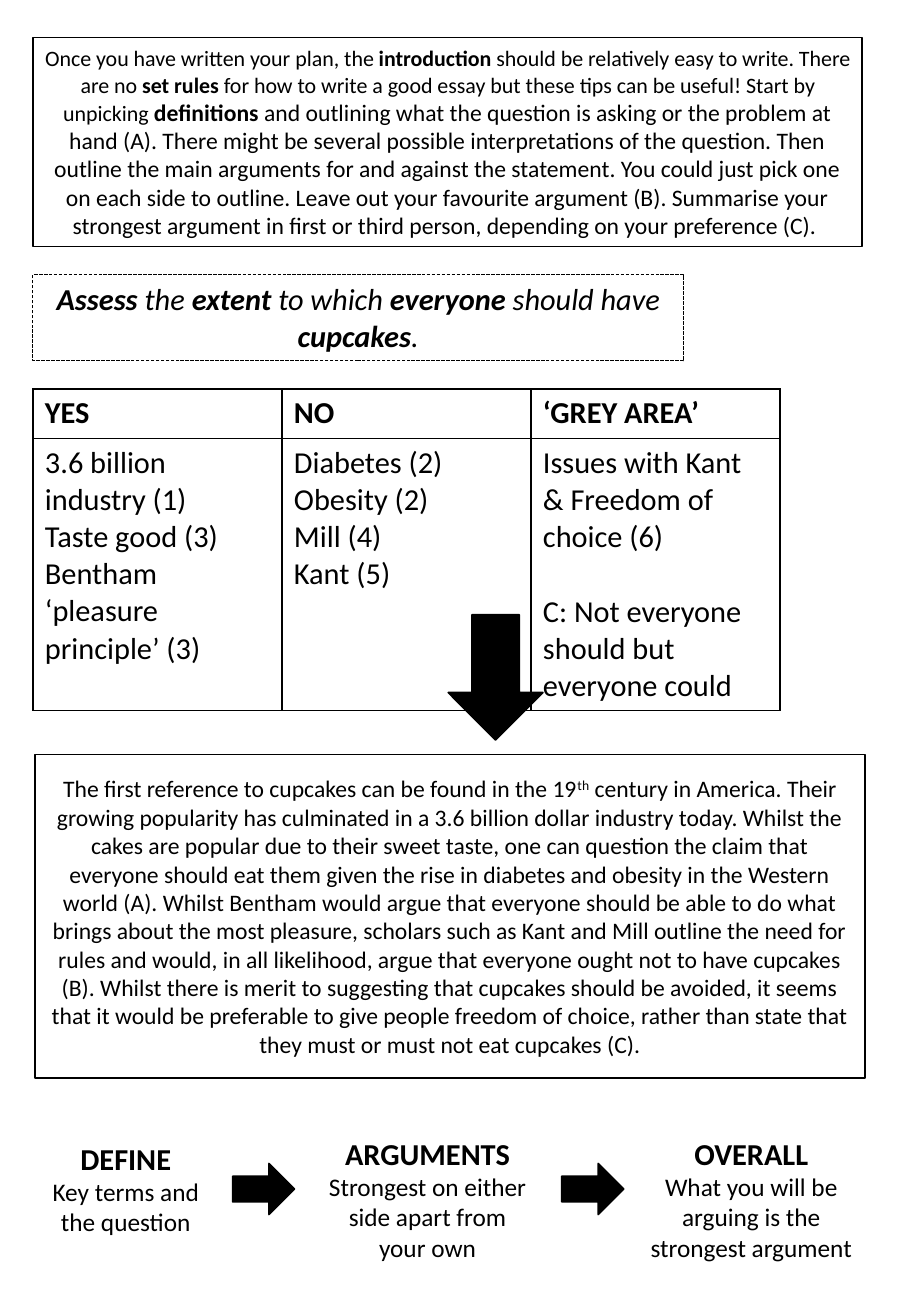
from dataclasses import dataclass
from typing import Optional

from lxml.etree import SubElement
from pptx import Presentation
from pptx.dml.color import RGBColor
from pptx.enum.dml import MSO_LINE_DASH_STYLE as Dash
from pptx.enum.shapes import MSO_AUTO_SHAPE_TYPE as Shape
from pptx.enum.text import MSO_ANCHOR as Anchor, MSO_AUTO_SIZE as AutoSize, PP_ALIGN as Align
from pptx.oxml.ns import qn
from pptx.util import Inches, Pt


@dataclass(frozen=True)
class Theme:
    font: str = "Calibri"
    ink: RGBColor = RGBColor(0, 0, 0)
    paper: RGBColor = RGBColor(255, 255, 255)
    heading: int = 18
    caption: int = 15
    body: int = 14
    opening: int = 13
    line: float = 1
    thin: float = 0.75


@dataclass(frozen=True)
class Area:
    col: float
    row: float
    cols: float
    rows: float

    def emu(self) -> tuple[int, ...]:
        return tuple(int(n * UNIT) for n in (self.col, self.row, self.cols, self.rows))


@dataclass(frozen=True)
class Span:
    text: str
    size: int
    bold: bool = False
    italic: bool = False
    raised: bool = False


@dataclass(frozen=True)
class Panel:
    area: Area
    spans: list[Span]
    dashed: bool = False


@dataclass(frozen=True)
class Step:
    area: Area
    title: str
    detail: str


@dataclass(frozen=True)
class Arrow:
    area: Area
    turn: int = 0


@dataclass(frozen=True)
class Column:
    title: str
    points: list[str]
    gap: int = 0


T = Theme()
UNIT = Inches(0.1)
SLIDE = Area(0, 0, 75, 108.3)
LEFT = 2.7


def marked(text: str, size: int, italic: bool = False) -> list[Span]:
    return [Span(part, size, i % 2 == 1, italic)
            for i, part in enumerate(text.split("*")) if part]


INTRO = marked(
    "Once you have written your plan, the *introduction* should be relatively easy to write. "
    "There are no *set rules* for how to write a good essay but these tips can be useful! "
    "Start by unpicking", T.opening) + marked(
    " *definitions* and outlining what the question is asking or the problem at hand (A). "
    "There might be several possible interpretations of the question. Then outline the main "
    "arguments for and against the statement. You could just pick one on each side to outline. "
    "Leave out your favourite argument (B). Summarise your strongest argument in first or third "
    "person, depending on your preference (C). ", T.body)
QUESTION = marked("*Assess* the *extent* to which *everyone* should have *cupcakes*.",
                  T.heading, italic=True)
EXAMPLE = [
    Span("The first reference to cupcakes can be found in the 19", T.body),
    Span("th", T.body, raised=True),
    Span(" century in America. Their growing popularity has culminated in a 3.6 billion dollar "
         "industry today. Whilst the cakes are popular due to their sweet taste, one can question "
         "the claim that everyone should eat them given the rise in diabetes and obesity in the "
         "Western world (A). Whilst Bentham would argue that everyone should be able to do what "
         "brings about the most pleasure, scholars such as Kant and Mill outline the need for "
         "rules and would, in all likelihood, argue that everyone ought not to have cupcakes (B). "
         "Whilst there is merit to suggesting that cupcakes should be avoided, it seems that it "
         "would be preferable to give people freedom of choice, rather than state that they must "
         "or must not eat cupcakes (C).", T.body),
]
PANELS = [
    Panel(Area(LEFT, 3.1, 68.3, 17.2), INTRO),
    Panel(Area(LEFT, 22.6, 53.6, 7.1), QUESTION, dashed=True),
    Panel(Area(2.9, 62.1, 68.3, 26.6), EXAMPLE),
]
ARROWS = [Arrow(Area(36.9, 50.6, 7.8, 10.3))] + [
    Arrow(Area(col, 95.3, 4.2, 5.1), 270) for col in (19.6, 46.7)]
TABLE_AREA = Area(LEFT, 32, 61.5, 26.4)
HEADER_ROWS = 4.1
COLUMNS = [
    Column("YES", ["3.6 billion industry (1)", "Taste good (3)",
                   "Bentham ‘pleasure principle’ (3)"]),
    Column("NO", ["Diabetes (2)", "Obesity (2)", "Mill (4)", "Kant (5)"]),
    Column("‘GREY AREA’", ["Issues with Kant & Freedom of choice (6)",
                           "C: Not everyone should but everyone could"], gap=22),
]
STEPS = [
    Step(Area(2.9, 93.3, 14.9, 9.1), "DEFINE", "Key terms and the question"),
    Step(Area(26, 92.9, 18.4, 11.6), "ARGUMENTS", "Strongest on either side apart from your own"),
    Step(Area(51.1, 92.9, 21.5, 11.6), "OVERALL",
         "What you will be arguing is the strongest argument"),
]


def style(r, size: int, bold: bool = False, italic: bool = False) -> None:
    f = r.font
    f.name, f.size, f.bold, f.italic = T.font, Pt(size), bold, italic
    f.color.rgb = T.ink


def write(tf, lines: list[str], size: int, bold: bool = False, gap: int = 0) -> None:
    tf.text = "\n".join(lines)
    for i, p in enumerate(tf.paragraphs):
        if i and gap:
            p.space_before = Pt(gap)
        for r in p.runs:
            style(r, size, bold)


def add_preset(s, kind: Shape, area: Area, fill: Optional[RGBColor], width: float):
    sp = s.shapes.add_shape(kind, *area.emu())
    sp.shadow.inherit = False
    if fill is None:
        sp.fill.background()
    else:
        sp.fill.solid()
        sp.fill.fore_color.rgb = fill
    sp.line.color.rgb = T.ink
    sp.line.width = Pt(width)
    return sp


def add_arrow(s, arrow: Arrow) -> None:
    add_preset(s, Shape.DOWN_ARROW, arrow.area, T.ink, T.line).rotation = arrow.turn


def add_panel(s, panel: Panel) -> None:
    fill, width = (None, T.thin) if panel.dashed else (T.paper, T.line)
    sp = add_preset(s, Shape.RECTANGLE, panel.area, fill, width)
    tf = sp.text_frame
    tf.word_wrap = True
    tf.vertical_anchor = Anchor.MIDDLE
    if panel.dashed:
        sp.line.dash_style = Dash.SQUARE_DOT
        tf.vertical_anchor = Anchor.TOP
        tf.auto_size = AutoSize.SHAPE_TO_FIT_TEXT
    p = tf.paragraphs[0]
    p.alignment = Align.CENTER
    for span in panel.spans:
        r = p.add_run()
        r.text = span.text
        style(r, span.size, span.bold, span.italic)
        if span.raised:
            r._r.get_or_add_rPr().set("baseline", "30000")


def outline_cell(cell) -> None:
    pr = cell._tc.get_or_add_tcPr()
    for side in ("lnL", "lnR", "lnT", "lnB"):
        ln = SubElement(pr, qn(f"a:{side}"), w=str(Pt(T.line)))
        SubElement(SubElement(ln, qn("a:solidFill")), qn("a:srgbClr"), val=str(T.ink))
    cell.fill.background()


def add_arguments(s) -> None:
    table = s.shapes.add_table(2, len(COLUMNS), *TABLE_AREA.emu()).table
    table.first_row = table.horz_banding = False
    table.rows[0].height = int(HEADER_ROWS * UNIT)
    table.rows[1].height = int((TABLE_AREA.rows - HEADER_ROWS) * UNIT)
    for i, column in enumerate(COLUMNS):
        write(table.cell(0, i).text_frame, [column.title], T.heading, bold=True)
        write(table.cell(1, i).text_frame, column.points, T.heading, gap=column.gap)
    for cell in table.iter_cells():
        outline_cell(cell)


def add_step(s, step: Step) -> None:
    tf = s.shapes.add_textbox(*step.area.emu()).text_frame
    tf.word_wrap = True
    tf.auto_size = AutoSize.SHAPE_TO_FIT_TEXT
    tf.text = f"{step.title}\n{step.detail}"
    for p, size, bold in zip(tf.paragraphs, (T.heading, T.caption), (True, False)):
        p.alignment = Align.CENTER
        style(p.runs[0], size, bold)


def main() -> None:
    prs = Presentation()
    prs.slide_width, prs.slide_height = SLIDE.emu()[2:]
    s = prs.slides.add_slide(prs.slide_layouts[6])
    for arrow in ARROWS:
        add_arrow(s, arrow)
    add_arguments(s)
    for panel in PANELS:
        add_panel(s, panel)
    for step in STEPS:
        add_step(s, step)
    prs.save("out.pptx")


if __name__ == "__main__":
    main()
